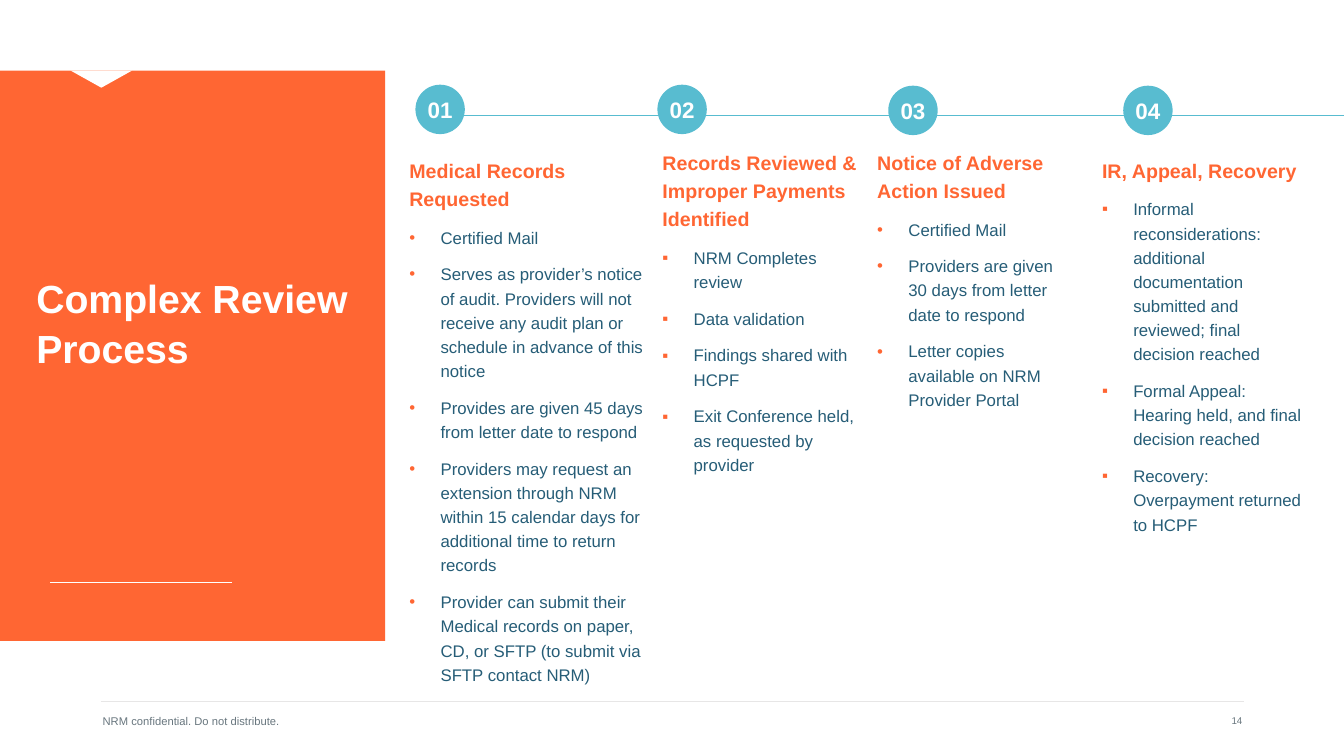
from dataclasses import dataclass
from typing import NamedTuple

from lxml.etree import SubElement
from pptx import Presentation
from pptx.dml.color import RGBColor as Rgb
from pptx.enum.shapes import MSO_CONNECTOR as Connector, MSO_SHAPE as Preset
from pptx.enum.text import MSO_ANCHOR as Anchor, MSO_AUTO_SIZE as AutoSize, PP_ALIGN as Align
from pptx.oxml.ns import qn
from pptx.util import Emu, Pt

EMU_PER_PX = 9144


@dataclass(frozen=True)
class Theme:
    """Colours, font and type sizes of the deck."""
    font: str = "Arial"
    accent: str = "FF6633"
    marker: str = "58BCD0"
    body: str = "265D77"
    muted: str = "68767E"
    rule: str = "E7E6E6"
    white: str = "FFFFFF"
    title_size: int = 28
    badge_size: int = 16
    heading_size: int = 14
    body_size: int = 12
    footer_size: int = 8
    number_size: int = 7


class Box(NamedTuple):
    """A rectangle in px, 100 px to the inch."""
    left: int
    top: int
    width: int
    height: int

    def inner(self, left, top, width, height):
        """Return a box placed relative to this one."""
        return Box(self.left + left, self.top + top, width, height)


class Step(NamedTuple):
    """One stage of the process with its badge and text boxes."""
    badge: Box
    column: Box
    bullet: str
    heading: str
    items: tuple


THEME = Theme()
PAGE = Box(0, 0, 1333, 750)
BADGE = 49
STEPS = (
    Step(Box(412, 84, BADGE, BADGE), Box(396, 148, 256, 540), "•", "Medical Records Requested", (
        "Certified Mail",
        "Serves as provider’s notice of audit. Providers will not receive any audit plan "
        "or schedule in advance of this notice",
        "Provides are given 45 days from letter date to respond",
        "Providers may request an extension through NRM within 15 calendar days for "
        "additional time to return records",
        "Provider can submit their Medical records on paper, CD, or SFTP "
        "(to submit via SFTP contact NRM)",
    )),
    Step(Box(652, 84, BADGE, BADGE), Box(647, 140, 218, 337), "▪",
         "Records Reviewed & Improper Payments Identified", (
        "NRM Completes review",
        "Data validation",
        "Findings shared with HCPF",
        "Exit Conference held, as requested by provider",
    )),
    Step(Box(881, 85, BADGE, BADGE), Box(860, 140, 216, 272), "•",
         "Notice of Adverse Action Issued", (
        "Certified Mail",
        "Providers are given 30 days from letter date to respond",
        "Letter copies available on NRM Provider Portal",
    )),
    Step(Box(1114, 85, BADGE, BADGE), Box(1083, 148, 218, 389), "▪", "IR, Appeal, Recovery", (
        "Informal reconsiderations: additional documentation submitted and reviewed; "
        "final decision reached",
        "Formal Appeal: Hearing held, and final decision reached",
        "Recovery: Overpayment returned to HCPF",
    )),
)


def px(length):
    """Turn px into EMU."""
    return Emu(length * EMU_PER_PX)


def add_span(para, text, size, color, bold=False):
    """Add one formatted run to a paragraph."""
    span = para.add_run()
    span.text = text
    span.font.name = THEME.font
    span.font.size = Pt(size)
    span.font.bold = bold
    span.font.color.rgb = Rgb.from_string(color)


def add_filled(slide, preset, box, color):
    """Add a flat preset shape without outline or shadow."""
    shape = slide.shapes.add_shape(preset, *map(px, box))
    shape.shadow.inherit = False
    shape.fill.solid()
    shape.fill.fore_color.rgb = Rgb.from_string(color)
    shape.line.fill.background()
    return shape


def add_rule(slide, left, right, top, color):
    """Add a thin horizontal line."""
    rule = slide.shapes.add_connector(
        Connector.STRAIGHT, px(left), px(top), px(right), px(top))
    rule.line.color.rgb = Rgb.from_string(color)
    rule.line.width = Pt(0.5)
    SubElement(rule.element.spPr, qn("a:effectLst"))


def place_holder(holder, box):
    """Move a placeholder to a box, bring it to the front and return its frame."""
    holder.left, holder.top, holder.width, holder.height = map(px, box)
    holder.element.getparent().append(holder.element)
    frame = holder.text_frame
    frame.word_wrap = True
    frame.auto_size = AutoSize.NONE
    frame.vertical_anchor = Anchor.TOP
    return frame


def set_bullet(para, bullet=None, indent=0):
    """Give a paragraph a hanging coloured bullet, or none."""
    props = para._p.get_or_add_pPr()
    props.set("marL", str(px(indent)))
    props.set("indent", str(-px(indent)))
    if bullet is None:
        SubElement(props, qn("a:buNone"))
        return
    color = SubElement(props, qn("a:buClr"))
    SubElement(color, qn("a:srgbClr"), val=THEME.accent)
    SubElement(props, qn("a:buFont"), typeface=THEME.font)
    SubElement(props, qn("a:buChar"), char=bullet)


def add_title_panel(slide, box):
    """Draw the coloured panel with its notch, title and rule."""
    add_filled(slide, Preset.RECTANGLE, box, THEME.accent)
    notch = add_filled(slide, Preset.ISOSCELES_TRIANGLE, box.inner(70, 0, 61, 17), THEME.white)
    notch.rotation = 180
    add_rule(slide, box.left + 50, box.left + 230, box.top + 508, THEME.white)
    frame = place_holder(slide.shapes.title, box.inner(36, 200, 310, 94))
    frame.margin_left = frame.margin_top = frame.margin_right = frame.margin_bottom = 0
    para = frame.paragraphs[0]
    para.alignment = Align.LEFT
    para.line_spacing = 1.05
    add_span(para, "Complex Review Process", THEME.title_size, THEME.white, True)


def add_badge(slide, box, number):
    """Draw a numbered circle."""
    badge = add_filled(slide, Preset.OVAL, box, THEME.marker)
    frame = badge.text_frame
    frame.word_wrap = False
    frame.vertical_anchor = Anchor.MIDDLE
    para = frame.paragraphs[0]
    para.alignment = Align.CENTER
    add_span(para, f"{number:02d}", THEME.badge_size, THEME.white, True)


def fill_column(holder, step):
    """Write the heading and bullet list of one step."""
    frame = place_holder(holder, step.column)
    for index, text in enumerate((step.heading, *step.items)):
        para = frame.add_paragraph() if index else frame.paragraphs[0]
        if index:
            set_bullet(para, step.bullet, 31)
        else:
            set_bullet(para)
        para.alignment = Align.LEFT
        para.line_spacing = 1.2
        para.space_before = Pt(3 if index else 0)
        para.space_after = Pt(6)
        if index:
            add_span(para, text, THEME.body_size, THEME.body)
        else:
            add_span(para, text, THEME.heading_size, THEME.accent, True)


def add_footer(slide, box):
    """Draw the footer rule, notice and page number."""
    add_rule(slide, box.left, box.left + box.width, box.top, THEME.rule)
    notes = (
        (box.inner(-8, -1, 450, 40), Align.LEFT,
         "NRM confidential. Do not distribute.", THEME.footer_size),
        (box.inner(842, -1, 300, 40), Align.RIGHT, "14", THEME.number_size),
    )
    for place, align, text, size in notes:
        frame = slide.shapes.add_textbox(*map(px, place)).text_frame
        frame.word_wrap = True
        frame.vertical_anchor = Anchor.MIDDLE
        para = frame.paragraphs[0]
        para.alignment = align
        add_span(para, text, size, THEME.muted)


def add_process_slide(deck, page):
    """Build the slide with a title panel and numbered columns."""
    slide = deck.slides.add_slide(deck.slide_layouts.get_by_name("Comparison"))
    bodies = [holder for holder in slide.placeholders if holder.placeholder_format.idx]
    add_footer(slide, page.inner(100, 696, 1134, 40))
    add_rule(slide, page.left + 427, page.left + page.width, page.top + 114, THEME.marker)
    add_title_panel(slide, page.inner(0, 70, 382, 566))
    for number, (holder, step) in enumerate(zip(bodies, STEPS), 1):
        add_badge(slide, step.badge, number)
        fill_column(holder, step)


def main():
    """Create and save the deck."""
    deck = Presentation()
    deck.slide_width, deck.slide_height = px(PAGE.width), px(PAGE.height)
    add_process_slide(deck, PAGE)
    deck.save("out.pptx")


if __name__ == "__main__":
    main()
